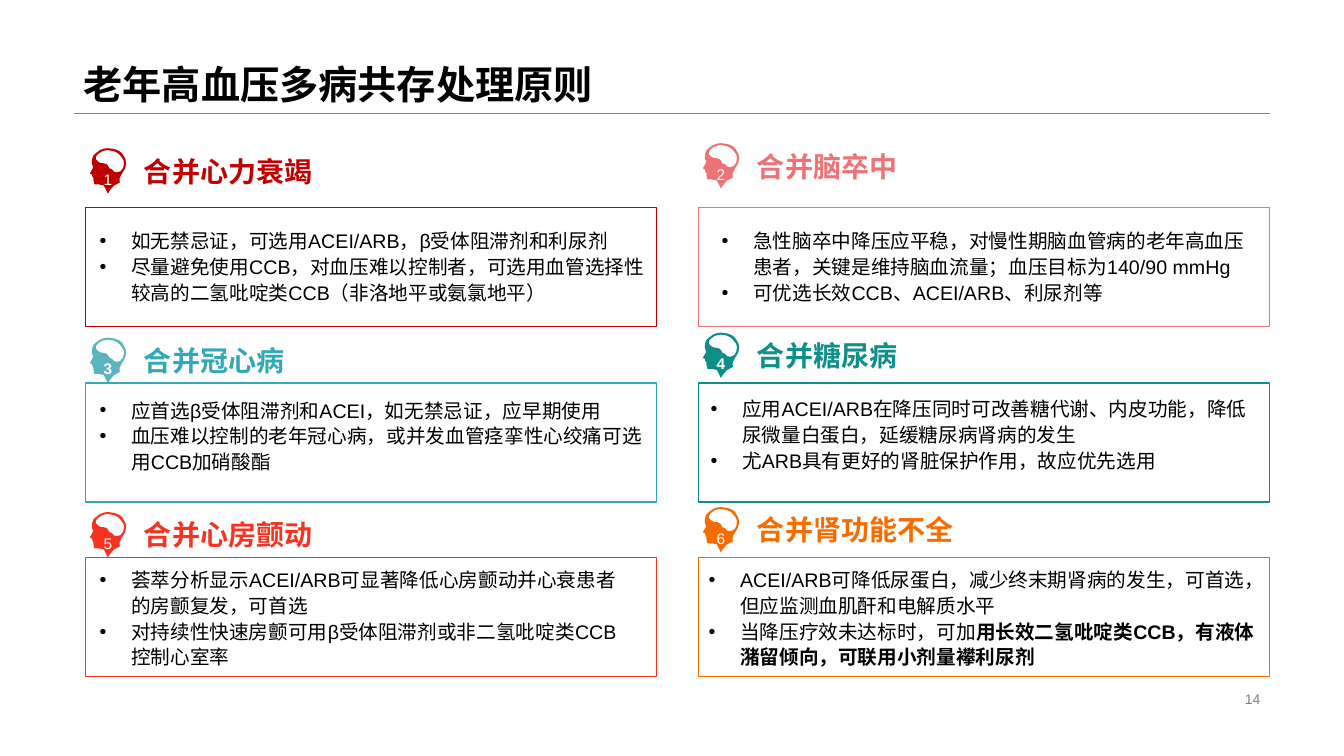
from lxml import etree
from pptx import Presentation
from pptx.dml import color
from pptx.enum import shapes, text
from pptx.oxml import ns
from pptx.util import Inches, Pt

BLACK, WHITE, GRAY = "000000", "FFFFFF", "808080"
BOX_W, BOX_H = 5.66, 1.18
COLS = (0.85, 6.93)
BOX_TOPS = (2.06, 3.8, 5.53)
ICON_TOPS = (1.47, 3.35, 5.08)
RIGHT_LIFT = 0.05
LEFT, MID, END = text.PP_ALIGN.LEFT, text.PP_ALIGN.CENTER, text.PP_ALIGN.RIGHT
TOP, CENTER, BOTTOM = (text.MSO_ANCHOR.TOP, text.MSO_ANCHOR.MIDDLE,
                       text.MSO_ANCHOR.BOTTOM)

# Head outline in hundredths of an inch: a start, then lines (2 numbers)
# and cubic curves (6 numbers).
HEAD = [
    (32, 5), (30, 3, 26, 0, 18, 0), (15, 0, 10, 1, 6, 5),
    (3, 7, 2, 10, 2, 15), (2, 16, 4, 18, 3, 20), (0, 25), (2, 26),
    (3, 29), (4, 30), (3.5, 31), (4, 33), (4, 35), (5, 36), (9, 36),
    (14, 37), (18, 45), (18, 45, 23, 35, 30, 34),
    (30, 34, 28, 30, 32, 25), (32, 25, 36, 20, 36, 16),
    (36, 16, 37, 11, 32, 5),
]
BRAIN = [
    (27, 24), (24, 24, 23, 22, 22, 21), (18, 21, 19, 17, 17, 16),
    (14, 14, 10, 16, 8, 13), (6, 11), (6, 9, 6, 8, 8, 6),
    (11, 3, 15, 2, 18, 2), (25, 2, 28, 5, 30, 7),
    (34, 11, 34, 14, 34, 15), (34, 20, 31, 24, 27, 24),
]

# Heading, colour, icon colour, number in bold, list place (x, y, w, h), items.
# An item is a list of (words, bold) runs.
TOPICS = [
    ("合并心力衰竭", "C00000", "C00000", False, (0.89, 2.2, 5.62, 0.95), [
        [("如无禁忌证，可选用ACEI/ARB，β受体阻滞剂和利尿剂", False)],
        [("尽量避免使用CCB，对血压难以控制者，可选用血管选择性较高的"
          "二氢吡啶类CCB（非洛地平或氨氯地平）", False)]]),
    ("合并脑卒中", "EC7376", "EC7376", False, (7.06, 2.2, 5.52, 0.93), [
        [("急性脑卒中降压应平稳，对慢性期脑血管病的老年高血压患者，"
          "关键是维持脑血流量；血压目标为140/90 mmHg", False)],
        [("可优选长效CCB、ACEI/ARB、利尿剂等", False)]]),
    ("合并冠心病", "33A9B8", "5AB5C0", True, (0.89, 3.88, 5.62, 1.18), [
        [("应首选β受体阻滞剂和ACEI，如无禁忌证，应早期使用", False)],
        [("血压难以控制的老年冠心病，或并发血管痉挛性心绞痛可选用"
          "CCB加硝酸酯", False)]]),
    ("合并糖尿病", "0F8F89", "0E8E88", True, (6.95, 3.87, 5.62, 0.94), [
        [("应用ACEI/ARB在降压同时可改善糖代谢、内皮功能，降低尿微量"
          "白蛋白，延缓糖尿病肾病的发生", False)],
        [("尤ARB具有更好的肾脏保护作用，故应优先选用", False)]]),
    ("合并心房颤动", "F63320", "F63320", False, (0.89, 5.56, 5.47, 1.18), [
        [("荟萃分析显示ACEI/ARB可显著降低心房颤动并心衰患者的房颤复发，"
          "可首选", False)],
        [("对持续性快速房颤可用β受体阻滞剂或非二氢吡啶类CCB控制心室率",
          False)]]),
    ("合并肾功能不全", "F76C00", "F76C00", False, (6.93, 5.56, 5.67, 1.18), [
        [("ACEI/ARB可降低尿蛋白，减少终末期肾病的发生，可首选，但应监测"
          "血肌酐和电解质水平", False)],
        [("当降压疗效未达标时，可加", False),
         ("用长效二氢吡啶类CCB，有液体潴留倾向，可联用小剂量襻利尿剂",
          True)]]),
]


def rgb(code):
    return color.RGBColor.from_string(code)


def bullet(para):
    props = para._p.get_or_add_pPr()
    props.set("marL", str(Pt(22.5)))
    props.set("indent", str(Pt(-22.5)))
    font = etree.SubElement(props, ns.qn("a:buFont"))
    font.set("typeface", "Arial")
    etree.SubElement(props, ns.qn("a:buChar")).set("char", "•")


def write(shape, items, size=14, ink=BLACK, align=LEFT, anchor=TOP,
          space=None, dots=False):
    """Fill a shape with paragraphs, each a list of (words, bold) runs."""
    frame = shape.text_frame
    frame.word_wrap = True
    frame.auto_size = text.MSO_AUTO_SIZE.NONE
    frame.vertical_anchor = anchor
    for i, runs in enumerate(items):
        para = frame.add_paragraph() if i else frame.paragraphs[0]
        para.alignment = align
        if space:
            para.line_spacing = space
        if dots:
            bullet(para)
        for words, bold in runs:
            run = para.add_run()
            run.text = words
            run.font.name = "Arial"
            run.font.size = Pt(size)
            run.font.bold = bold
            run.font.color.rgb = rgb(ink)


def label(slide, place, items, **style):
    write(slide.shapes.add_textbox(*map(Inches, place)), items, **style)


def frame(slide, x, y, ink):
    box = slide.shapes.add_shape(shapes.MSO_SHAPE.RECTANGLE, Inches(x),
                                 Inches(y), Inches(BOX_W), Inches(BOX_H))
    box.shadow.inherit = False
    box.fill.background()
    box.line.color.rgb = rgb(ink)
    box.line.width = Pt(1)


def trace(steps, cuts=3):
    """Turn lines and cubic curves into points, in thousandths of an inch."""
    spots = [steps[0]]
    for step in steps[1:]:
        if len(step) == 2:
            spots.append(step)
            continue
        a, b, c, d = spots[-1], step[:2], step[2:4], step[4:]
        for t in (n / cuts for n in range(1, cuts + 1)):
            s = 1 - t
            spots.append(tuple(
                s**3 * a[k] + 3 * s * s * t * b[k] + 3 * s * t * t * c[k]
                + t**3 * d[k] for k in (0, 1)))
    return [(x * 10, y * 10) for x, y in spots]


def icon(slide, x, y, ink, num, bold):
    head, brain = trace(HEAD), trace(BRAIN)
    pen = slide.shapes.build_freeform(*head[0], scale=Inches(1) / 1000)
    pen.add_line_segments(head[1:-1])
    pen.move_to(*brain[0])
    pen.add_line_segments(brain[1:-1])
    shape = pen.convert_to_shape(Inches(x), Inches(y))
    shape.shadow.inherit = False
    shape.fill.solid()
    shape.fill.fore_color.rgb = rgb(ink)
    shape.line.fill.background()
    write(shape, [[(str(num), bold)]], size=11, ink=WHITE, align=MID,
          anchor=BOTTOM)


def rule(slide):
    line = slide.shapes.add_connector(shapes.MSO_CONNECTOR.STRAIGHT, Inches(0.73),
                                      Inches(1.12), Inches(12.6), Inches(1.12))
    line.line.color.rgb = rgb(GRAY)
    line.line.width = Pt(0.25)
    etree.SubElement(line._element.spPr, ns.qn("a:effectLst"))


def topic(slide, i, name, ink, tint, bold, place, items):
    row, col = divmod(i, 2)
    x, y = COLS[col], ICON_TOPS[row] - RIGHT_LIFT * col
    frame(slide, x, BOX_TOPS[row], ink)
    icon(slide, x + 0.04, y, tint, i + 1, bold)
    label(slide, (x + 0.48, y, 4.04, 0.45), [[(name, True)]], size=20,
          ink=ink, anchor=CENTER)
    label(slide, place, items, space=1.1, dots=True)


def main():
    deck = Presentation()
    deck.slide_width, deck.slide_height = Inches(13.33), Inches(7.5)
    slide = deck.slides.add_slide(deck.slide_layouts[5])
    rule(slide)
    title = slide.shapes.title
    title.left, title.top = Inches(0.73), Inches(0)
    title.width, title.height = Inches(11.87), Inches(1.12)
    write(title, [[("老年高血压多病共存处理原则", True)]], size=28,
          anchor=BOTTOM, space=0.9)
    for i, data in enumerate(TOPICS):
        topic(slide, i, *data)
    label(slide, (9.42, 6.82, 3.18, 0.23), [[("14", False)]], size=10,
          ink=GRAY, align=END, anchor=CENTER)
    deck.save("out.pptx")


if __name__ == "__main__":
    main()
